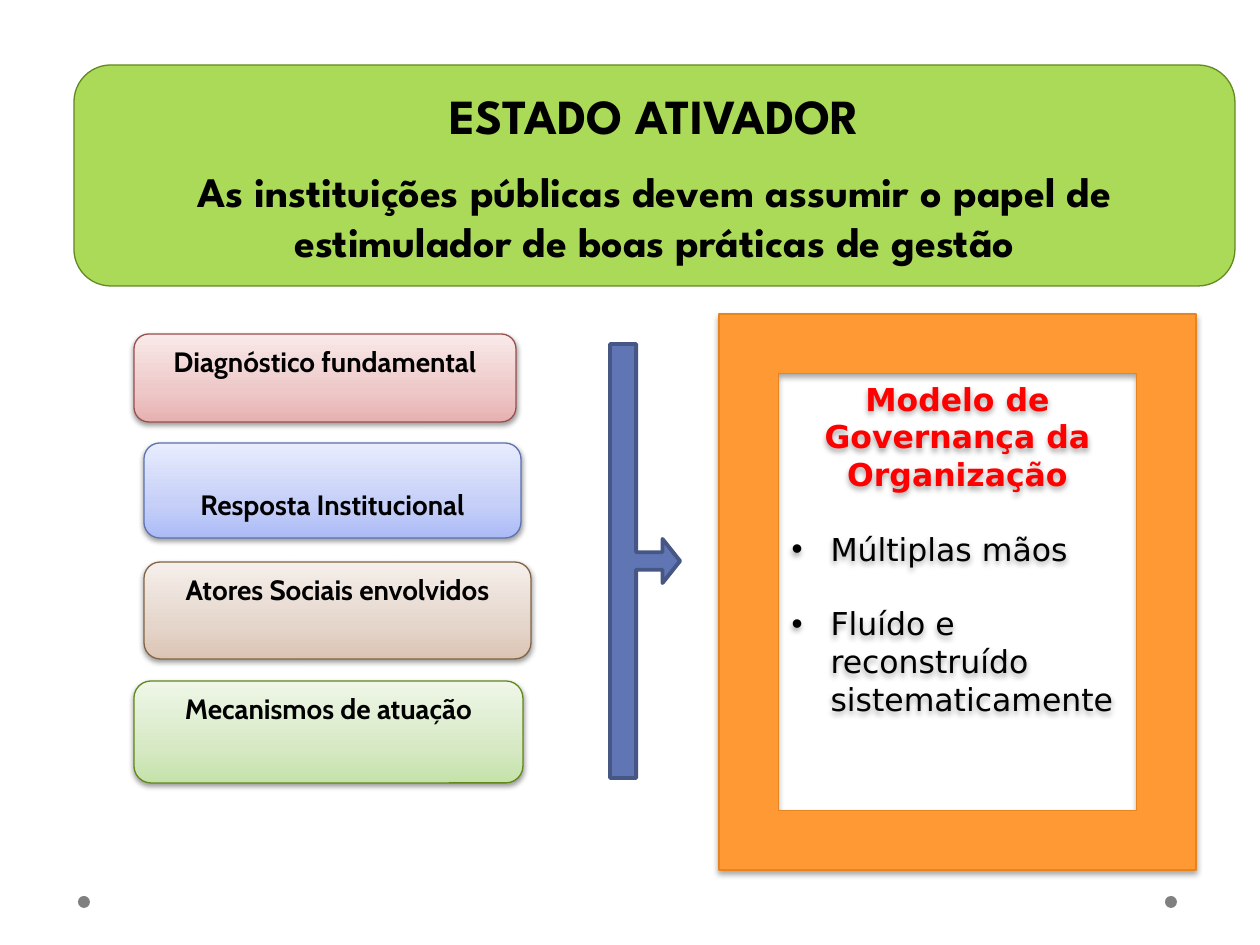
import copy
import pptx
import pptx.util
import pptx.dml.color
import pptx.enum.shapes
import pptx.enum.text
import pptx.oxml
import pptx.oxml.ns

THEME = {
    "heading": {"name": "League Spartan", "size": 28, "bold": True, "color": "000000"},
    "subheading": {"name": "League Spartan", "size": 24, "bold": True, "color": "000000"},
    "card": {"name": "Cabin", "size": 16, "bold": True, "color": "000000"},
    "model": {"name": "DejaVu Sans", "size": 18, "bold": True, "color": "FF0000"},
    "item": {"name": "DejaVu Sans", "size": 18, "bold": False, "color": "000000"},
    "banner": ("ABD958", "63891F", 0.75),
    "frame": ("FF9933", "E68422", 0.75),
    "arrow": ("6076B4", "475785", 2.25),
    "dot": ("808080", None, 0),
    "red": (("E8B0B0", "EEC8C8", "F9E9E9"), "9A4E4E", 0.75),
    "blue": (("ACBBF6", "C5CFF8", "E8ECFD"), "5C72B2", 0.75),
    "brown": (("DBC4B4", "E5D6CB", "F5EFEB"), "826445", 0.75),
    "green": (("C5E2AA", "D6E9C4", "EFF7E8"), "61881B", 0.75),
}

BANNER_BOX = (74, 65, 1161, 221)
BANNER = [
    ("ESTADO ATIVADOR", "heading", 0),
    ("As instituições públicas devem assumir o papel de estimulador de boas práticas de gestão",
     "subheading", 12),
]
CARDS = [
    ("Diagnóstico fundamental", "red", (134, 334, 382, 88), 6),
    ("Resposta Institucional", "blue", (144, 443, 377, 95), 40),
    ("Atores Sociais envolvidos", "brown", (144, 562, 387, 97), 6),
    ("Mecanismos de atuação", "green", (134, 681, 389, 102), 6),
]
ARROW_BOX = (610, 344, 70, 434)
FRAME_BOX = (719, 314, 477, 556)
MODEL = "Modelo de Governança da Organização"
ITEMS = ["Múltiplas mãos", "Fluído e reconstruído sistematicamente"]
DOTS = [(78, 896, 12, 12), (1165, 896, 12, 12)]

SHAPE = pptx.enum.shapes.MSO_SHAPE
ANCHOR = pptx.enum.text.MSO_ANCHOR
ALIGN = pptx.enum.text.PP_ALIGN
Pt = pptx.util.Pt
NS = pptx.oxml.ns.nsdecls("a")


def px(n):
    return round(n * 914400 / 126)


def rgb(code):
    return pptx.dml.color.RGBColor.from_string(code)


def set_gradient(sp, colors):
    sp.fill.gradient()
    sp.fill.gradient_angle = 90
    stops = sp._element.spPr.find(".//" + pptx.oxml.ns.qn("a:gsLst"))
    stops.insert(1, copy.deepcopy(stops[0]))
    for stop, color, position in zip(sp.fill.gradient_stops, colors, (0, 0.35, 1)):
        stop.color.rgb = rgb(color)
        stop.position = position


def add_shape(s, kind, box, style, adjustments=()):
    sp = s.shapes.add_shape(kind, *map(px, box))
    fill, line, width = THEME[style]
    if isinstance(fill, tuple):
        set_gradient(sp, fill)
    else:
        sp.fill.solid()
        sp.fill.fore_color.rgb = rgb(fill)
    if line:
        sp.line.color.rgb = rgb(line)
        sp.line.width = Pt(width)
    else:
        sp.line.fill.background()
    sp.shadow.inherit = False
    for i, value in enumerate(adjustments):
        sp.adjustments[i] = value
    return sp


def add_shadow(sp, distance, alpha):
    effects = sp._element.spPr.find(pptx.oxml.ns.qn("a:effectLst"))
    effects.append(pptx.oxml.parse_xml(
        f'<a:outerShdw {NS} blurRad="{Pt(3.1)}" dist="{Pt(distance)}" dir="5400000" rotWithShape="0">'
        f'<a:srgbClr val="000000"><a:alpha val="{alpha * 1000}"/></a:srgbClr></a:outerShdw>'))


def add_bullet(p):
    pPr = p._p.get_or_add_pPr()
    pPr.set("marL", str(px(39)))
    pPr.set("indent", str(px(-39)))
    pPr.append(pptx.oxml.parse_xml(f'<a:buFont {NS} typeface="Arial"/>'))
    pPr.append(pptx.oxml.parse_xml(f'<a:buChar {NS} char="•"/>'))


def write(tf, lines, anchor, margins):
    frame_format = {"word_wrap": True, "auto_size": pptx.enum.text.MSO_AUTO_SIZE.NONE,
                    "vertical_anchor": anchor}
    sides = ("margin_left", "margin_top", "margin_right", "margin_bottom")
    frame_format.update(zip(sides, map(px, margins)))
    for name, value in frame_format.items():
        setattr(tf, name, value)
    for i, (text, style, before) in enumerate(lines):
        p = tf.add_paragraph() if i else tf.paragraphs[0]
        p.alignment = ALIGN.LEFT if style == "item" else ALIGN.CENTER
        p.space_before = Pt(before)
        if style == "item":
            add_bullet(p)
        r = p.add_run()
        r.text = text
        look = THEME[style]
        for name, value in {"name": look["name"], "size": Pt(look["size"]), "bold": look["bold"]}.items():
            setattr(r.font, name, value)
        r.font.color.rgb = rgb(look["color"])


def main():
    prs = pptx.Presentation()
    prs.slide_width, prs.slide_height = px(1260), px(945)
    s = prs.slides.add_slide(prs.slide_layouts[5])

    for box in DOTS:
        add_shape(s, SHAPE.OVAL, box, "dot")

    for text, style, box, top in CARDS:
        sp = add_shape(s, SHAPE.ROUNDED_RECTANGLE, box, style, [0.167])
        add_shadow(sp, 1.6, 38)
        write(sp.text_frame, [(text, "card", 0)], ANCHOR.TOP, (13, top, 13, 6))

    sp = add_shape(s, SHAPE.FRAME, FRAME_BOX, "frame")
    add_shadow(sp, 1.8, 35)
    lines = [(MODEL, "model", 0)] + [(item, "item", 21) for item in ITEMS]
    write(sp.text_frame, lines, ANCHOR.TOP, (13, 6, 13, 6))

    add_shape(s, SHAPE.RIGHT_ARROW_CALLOUT, ARROW_BOX, "arrow", [0.25, 0.315, 0.25, 0.374])

    add_shape(s, SHAPE.ROUNDED_RECTANGLE, BANNER_BOX, "banner")
    title = s.shapes.title
    title.left, title.top, title.width, title.height = map(px, BANNER_BOX)
    s.shapes._spTree.append(title._element)
    write(title.text_frame, BANNER, ANCHOR.MIDDLE, (24, 6, 24, 6))

    prs.save("out.pptx")


if __name__ == "__main__":
    main()
